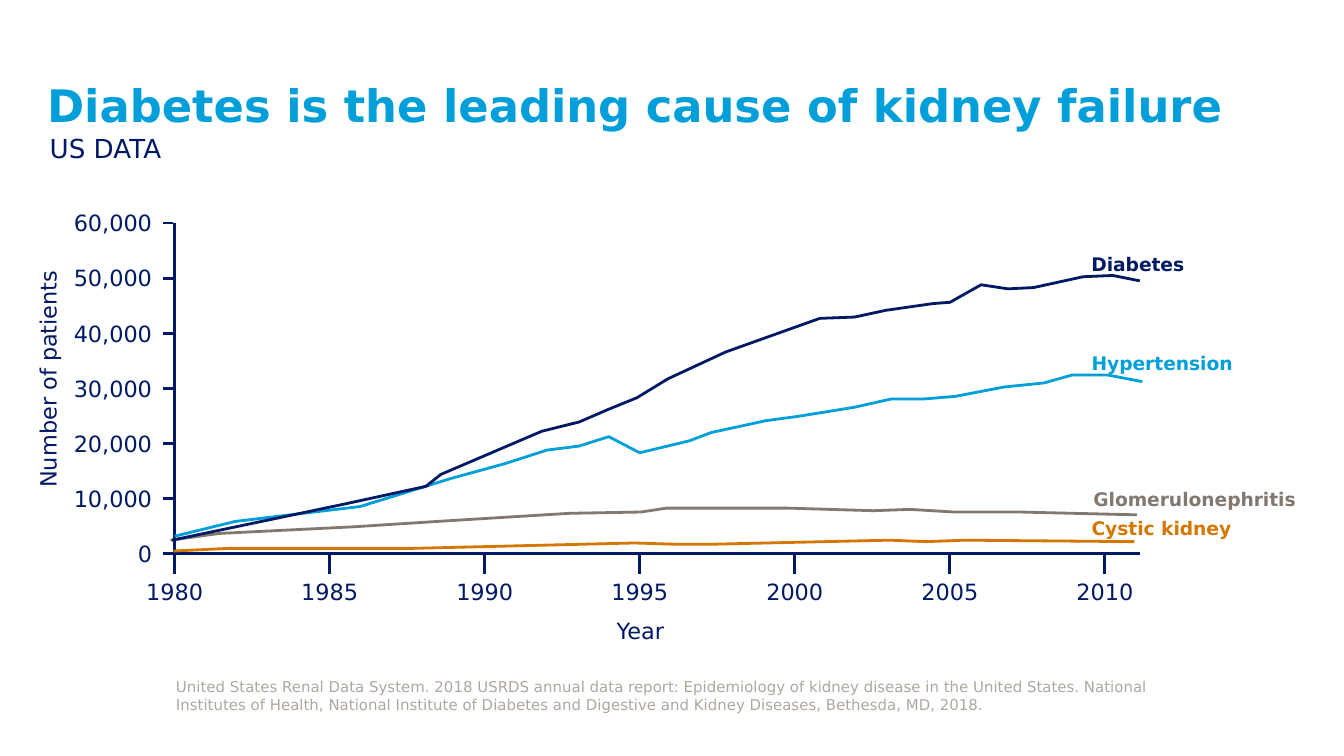
from dataclasses import dataclass

from lxml import etree
from pptx import Presentation
from pptx.dml.color import RGBColor
from pptx.enum import shapes, text
from pptx.oxml import ns
from pptx.util import Pt

LEFT, MID, RIGHT = text.PP_ALIGN.LEFT, text.PP_ALIGN.CENTER, text.PP_ALIGN.RIGHT


@dataclass(frozen=True)
class Theme:
    font: str = "DejaVu Sans"
    navy: str = "001965"
    blue: str = "009FDA"
    gray: str = "82786F"
    orange: str = "D47600"
    pale: str = "AEA79F"
    title: int = 24
    sub: int = 14
    axis: int = 12
    label: int = 10
    note: int = 8
    line: float = 1.5


T = Theme()

# Plot frame in points
X0, X1, Y0, Y1 = 93.6, 610.6, 119.5, 296.6
ROW, COL = (Y1 - Y0) / 6, 83.05

# Name, colour, label top, label width, points of the curve
CURVES = [
    ("Cystic kidney", T.orange, 273.6, 89.3, [
        (92.9, 295.2), (122.4, 293.8), (221, 293.8), (339.8, 290.9),
        (362.2, 291.6), (380.9, 291.6), (476.6, 289.4), (496.1, 290.2),
        (517, 289.4), (607.7, 290.2)]),
    ("Glomerulonephritis", T.gray, 257.8, 123.8, [
        (91.4, 289.4), (117.4, 285.8), (190.1, 282.2), (233.3, 279.4),
        (305.3, 275), (343.4, 274.3), (357.1, 272.2), (387.4, 272.2),
        (421.9, 272.2), (468, 273.6), (487.4, 272.9), (511.2, 274.3),
        (546.5, 274.3), (574.6, 275), (609.1, 275.8)]),
    ("Hypertension", T.blue, 185, 90, [
        (93.6, 287.3), (126, 279.4), (193, 271.4), (241.9, 256.3),
        (270.7, 248.4), (293, 241.2), (310.3, 239), (326.2, 234),
        (342.7, 242.6), (369.4, 236.2), (380.9, 231.8), (410.4, 225.4),
        (427, 223.2), (445, 220.3), (457.9, 218.2), (477.4, 213.8),
        (494.6, 213.8), (511.9, 212.4), (537.8, 207.4), (559.4, 205.2),
        (574.6, 200.9), (593.3, 200.9), (612, 204.5)]),
    ("Diabetes", T.navy, 131.8, 64.1, [
        (92.2, 289.4), (126.7, 282.2), (185, 270), (228.2, 260.6),
        (236.2, 254.2), (290.2, 231.1), (310.3, 226.1), (325.4, 219.6),
        (341.3, 213.1), (357.8, 203), (388.8, 188.6), (439.2, 170.6),
        (457.9, 169.9), (474.5, 166.3), (499.7, 162.7), (509, 162),
        (525.6, 152.6), (540, 154.8), (553.7, 154.1), (580.3, 148.3),
        (596.2, 147.6), (610.6, 150.5)]),
]

NOTE = ("United States Renal Data System. 2018 USRDS annual data report: "
        "Epidemiology of kidney disease in the United States. National "
        "Institutes of Health, National Institute of Diabetes and Digestive "
        "and Kidney Diseases, Bethesda, MD, 2018.")


def write(shape, words, size, color, bold=False, align=LEFT,
          anchor=text.MSO_ANCHOR.TOP, pads=None, wrap=True):
    frame = shape.text_frame
    frame.auto_size = text.MSO_AUTO_SIZE.NONE
    frame.word_wrap = wrap
    frame.vertical_anchor = anchor
    if pads:
        (frame.margin_left, frame.margin_top,
         frame.margin_right, frame.margin_bottom) = map(Pt, pads)
    para = frame.paragraphs[0]
    para.alignment = align
    run = para.add_run()
    run.text = words
    font = run.font
    font.name, font.size, font.bold = T.font, Pt(size), bold
    font.color.rgb = RGBColor.from_string(color)


def add_text(tree, box, *args, **style):
    shape = tree.add_textbox(*map(Pt, box))
    write(shape, *args, **style)
    return shape


def stroke(shape, color):
    shape.line.color.rgb = RGBColor.from_string(color)
    shape.line.width = Pt(T.line)


def add_line(tree, *ends):
    line = tree.add_connector(shapes.MSO_CONNECTOR.STRAIGHT, *map(Pt, ends))
    stroke(line, T.navy)
    etree.SubElement(line._element.spPr, ns.qn("a:effectLst"))


def add_curve(tree, points, color):
    start, *rest = [(Pt(x), Pt(y)) for x, y in points]
    pen = tree.build_freeform(*start)
    pen.add_line_segments(rest, close=False)
    curve = pen.convert_to_shape()
    curve.shadow.inherit = False
    curve.fill.background()
    stroke(curve, color)


def add_axes(tree):
    add_line(tree, X0, Y0, X0, Y1)
    add_line(tree, X0, Y1, X1, Y1)
    for i in range(7):
        y, x = Y0 + i * ROW, X0 + i * COL
        add_line(tree, 87.1, y, 92.9, y)
        add_text(tree, (28.8, y - 10.8, 59.8, 21.6), f"{60000 - i * 10000:,}",
                 T.axis, T.navy, align=RIGHT)
        add_line(tree, x, Y1, x, Y1 + 10.8)
        add_text(tree, (x - 22.7, 306, 45.4, 21.6), str(1980 + i * 5),
                 T.axis, T.navy, align=MID)
    side = add_text(tree, (-47.5, 193, 144.7, 20.2), "Number of patients",
                    T.axis, T.navy, align=MID)
    side.rotation = 270
    add_text(tree, (320.4, 326.9, 45.4, 21.6), "Year",
             T.axis, T.navy, align=MID)


def main():
    deck = Presentation()
    deck.slide_width, deck.slide_height = Pt(720), Pt(405)
    slide = deck.slides.add_slide(deck.slide_layouts[5])
    tree = slide.shapes

    title = tree.title
    title.left, title.top, title.width, title.height = map(
        Pt, (25.2, 40.3, 670.3, 31))
    write(title, "Diabetes is the leading cause of kidney failure", T.title,
          T.blue, bold=True, anchor=text.MSO_ANCHOR.MIDDLE, pads=(0, 0, 0, 0))
    add_text(tree, (25.2, 71.3, 670.3, 15.8), "US DATA", T.sub, T.navy,
             anchor=text.MSO_ANCHOR.MIDDLE, pads=(1.4, 0, 17.3, 0))
    add_text(tree, (94.3, 347, 544.3, 35.3), NOTE, T.note, T.pale,
             anchor=text.MSO_ANCHOR.BOTTOM, pads=(0, 0, 0, 0))

    plot = tree.add_group_shape().shapes
    add_axes(plot)
    for _, color, _, _, points in CURVES:
        add_curve(plot, points, color)
    for name, color, top, width, _ in reversed(CURVES):
        add_text(tree, (577.4, top, width, 19.4), name, T.label, color,
                 bold=True, align=RIGHT, wrap=False)
    deck.save("out.pptx")


if __name__ == "__main__":
    main()
